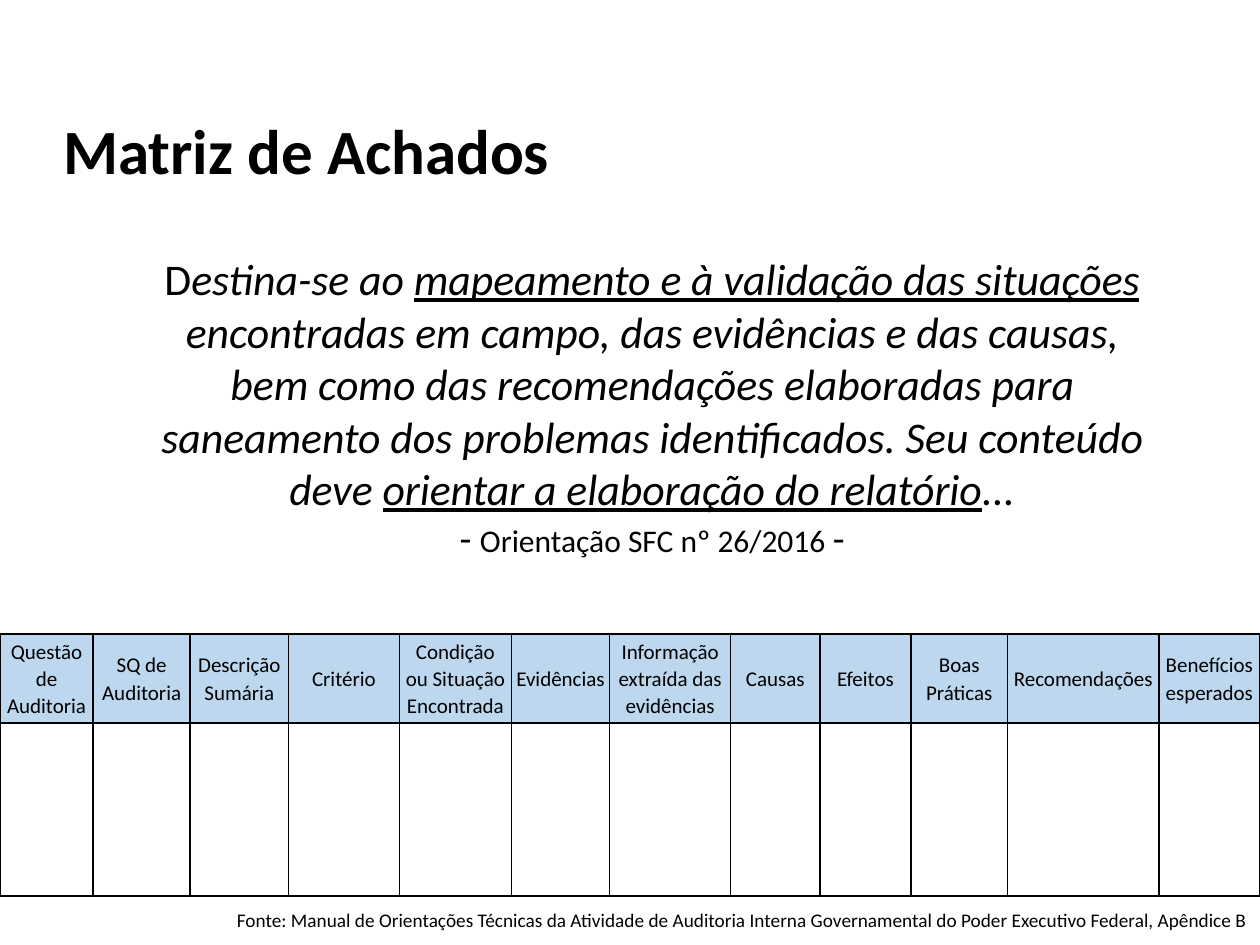
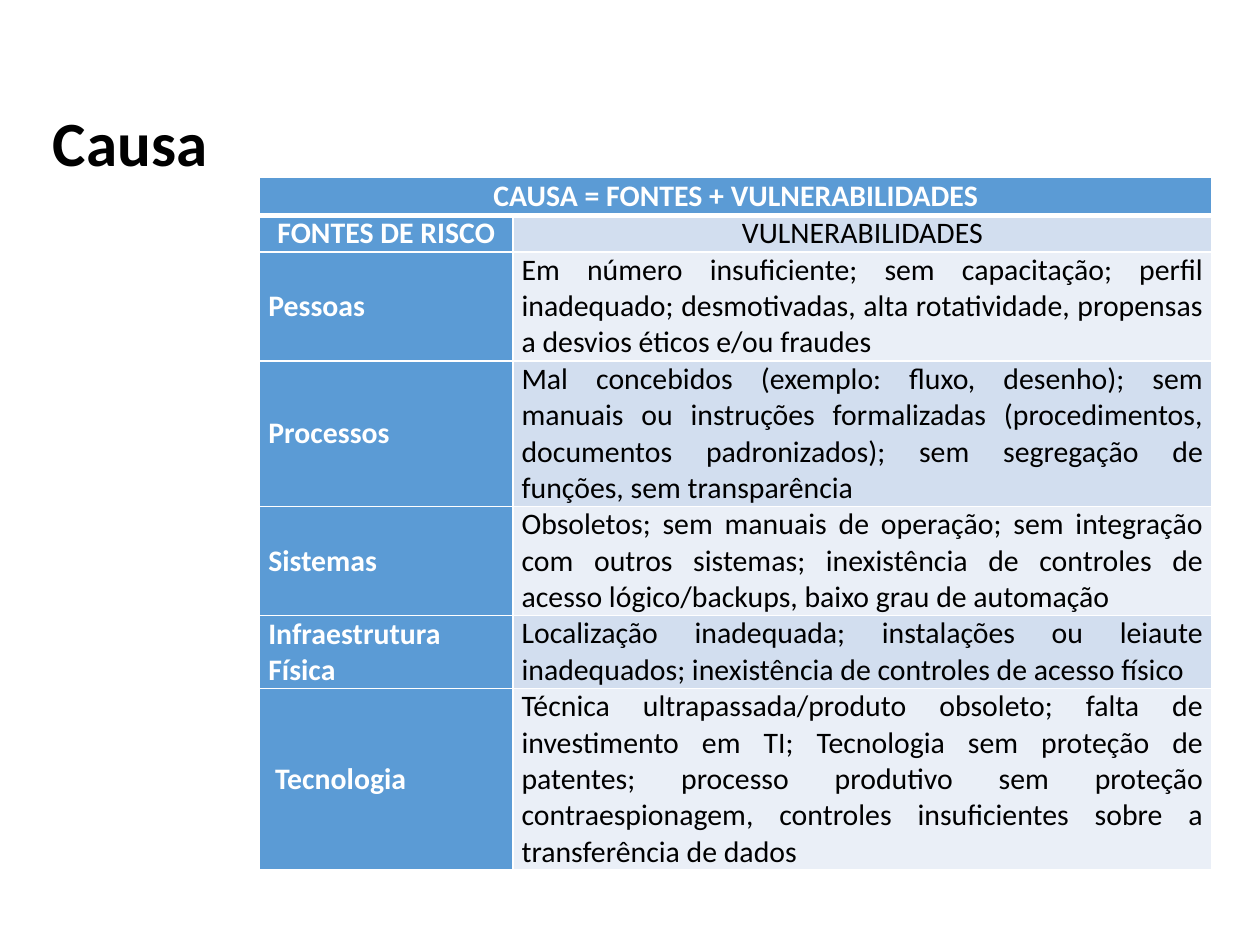
from dataclasses import dataclass
from typing import NamedTuple

from lxml.etree import SubElement
from pptx import Presentation
from pptx.dml.color import RGBColor
from pptx.enum.text import MSO_ANCHOR as Anchor, MSO_AUTO_SIZE as Fit, PP_ALIGN as Align
from pptx.oxml.ns import qn
from pptx.util import Inches, Pt

FONT = "Calibri"
BLACK, WHITE = "000000", "FFFFFF"
SKY, BLUE = "BDD7EE", "5B9BD5"
BANDS = ("EAEFF7", "D2DEEF")


class Span(NamedTuple):
    text: str
    size: int
    slant: bool = False
    line: bool = False


@dataclass
class Look:
    """How the text and ground of a table cell are drawn."""
    fill: str
    size: int
    ink: str = BLACK
    bold: bool = False
    align: Align = Align.CENTER
    anchor: Anchor = Anchor.TOP
    pad: float = 0.07
    space: float = 1.0


QUOTE = (
    (
        Span("D", 25),
        Span("estina-se ao ", 25, True),
        Span("mapeamento e à validação das situações", 25, True, True),
        Span(" encontradas em campo, das evidências e das causas, bem como das "
             "recomendações elaboradas para saneamento dos problemas identificados. "
             "Seu conteúdo deve ", 25, True),
        Span("orientar a elaboração do relatório", 25, True, True),
        Span("...", 25, True),
    ),
    (Span("- ", 22), Span("Orientação SFC nº 26/2016 ", 18), Span("-", 22)),
)
SOURCE = ("Fonte: Manual de Orientações Técnicas da Atividade de Auditoria Interna "
          "Governamental do Poder Executivo Federal, Apêndice B")

# Heading and column width
MATRIX = (
    ("Questão de Auditoria", 0.74),
    ("SQ de Auditoria", 0.77),
    ("Descrição Sumária", 0.78),
    ("Critério", 0.88),
    ("Condição ou Situação Encontrada", 0.89),
    ("Evidências", 0.78),
    ("Informação extraída das evidências", 0.96),
    ("Causas", 0.71),
    ("Efeitos", 0.72),
    ("Boas Práticas", 0.77),
    ("Recomendações", 1.2),
    ("Benefícios esperados", 0.8),
)

# Risk source, its weaknesses and the lines of text they take
RISKS = (
    ("Pessoas", "Em número insuficiente; sem capacitação; perfil inadequado; "
     "desmotivadas, alta rotatividade, propensas a desvios éticos e/ou fraudes", 3),
    ("Processos", "Mal concebidos (exemplo: fluxo, desenho); sem manuais ou instruções "
     "formalizadas (procedimentos, documentos padronizados); sem segregação de funções, "
     "sem transparência", 4),
    ("Sistemas", "Obsoletos; sem manuais de operação; sem integração com outros sistemas; "
     "inexistência de controles de acesso lógico/backups, baixo grau de automação", 3),
    ("Infraestrutura Física", "Localização inadequada; instalações ou leiaute inadequados; "
     "inexistência de controles de acesso físico", 2),
    (" Tecnologia", "Técnica ultrapassada/produto obsoleto; falta de investimento em TI; "
     "Tecnologia sem proteção de patentes; processo produtivo sem proteção "
     "contraespionagem, controles insuficientes sobre a transferência de dados", 5),
)
LINE = 0.28


def tint(code: str) -> RGBColor:
    return RGBColor.from_string(code)


def style(para, size: int | None = None, ink: str = BLACK, bold: bool = False) -> None:
    font = para.font
    font.name = FONT
    font.bold = bold
    font.color.rgb = tint(ink)
    if size:
        font.size = Pt(size)


def add_page(deck, title: str, left: float, top: float):
    page = deck.slides.add_slide(deck.slide_layouts[5])
    head = page.shapes.title
    head.left, head.top = Inches(left), Inches(top)
    head.width, head.height = Inches(9.16), Inches(1.05)
    frame = head.text_frame
    frame.text = title
    frame.auto_size = Fit.NONE
    frame.vertical_anchor = Anchor.TOP
    para = frame.paragraphs[0]
    para.alignment = Align.LEFT
    para.line_spacing = 0.9
    style(para, 36, bold=True)
    return page


def add_text(page, box: tuple[float, ...], paras, align: Align) -> None:
    frame = page.shapes.add_textbox(*map(Inches, box)).text_frame
    frame.word_wrap = True
    frame.auto_size = Fit.SHAPE_TO_FIT_TEXT
    for i, spans in enumerate(paras):
        para = frame.add_paragraph() if i else frame.paragraphs[0]
        para.alignment = align
        style(para)
        for span in spans:
            run = para.add_run()
            run.text = span.text
            run.font.size = Pt(span.size)
            run.font.italic = span.slant
            run.font.underline = span.line


def add_grid(page, left: float, top: float, cols, rows):
    """Add a plain table with the given column widths and row heights."""
    grid = page.shapes.add_table(len(rows), len(cols), Inches(left), Inches(top),
                                 Inches(sum(cols)), Inches(sum(rows))).table
    grid.first_row = grid.horz_banding = False
    for col, width in zip(grid.columns, cols):
        col.width = Inches(width)
    for row, height in zip(grid.rows, rows):
        row.height = Inches(height)
    return grid


def edge(cell, ink: str, top: int = 1, base: int = 1) -> None:
    """Draw the four borders; call before the fill is set."""
    props = cell._tc.get_or_add_tcPr()
    for side, width in (("L", 1), ("R", 1), ("T", top), ("B", base)):
        line = SubElement(props, qn(f"a:ln{side}"), w=str(Pt(width)))
        SubElement(SubElement(line, qn("a:solidFill")), qn("a:srgbClr"), val=ink)


def put(cell, text: str, look: Look) -> None:
    cell.fill.solid()
    cell.fill.fore_color.rgb = tint(look.fill)
    cell.margin_left = cell.margin_right = Inches(look.pad)
    cell.margin_top = cell.margin_bottom = 0
    cell.vertical_anchor = look.anchor
    cell.text = text
    para = cell.text_frame.paragraphs[0]
    para.alignment = look.align
    para.line_spacing = look.space
    style(para, look.size, look.ink, look.bold)


def add_matrix(deck) -> None:
    page = add_page(deck, "Matriz de Achados", 0.4, 0.9)
    add_text(page, (1.04, 1.95, 8.27, 2.57), QUOTE, Align.CENTER)
    grid = add_grid(page, 0, 5.03, [width for _, width in MATRIX], (0.71, 1.37))
    look = Look(SKY, 12, anchor=Anchor.MIDDLE, pad=0.03, space=1.07)
    for i, (name, _) in enumerate(MATRIX):
        head, blank = grid.cell(0, i), grid.cell(1, i)
        edge(head, BLACK)
        edge(blank, BLACK)
        put(head, name, look)
        blank.fill.background()
    add_text(page, (1.62, 7.16, 8.38, 0.29), [[Span(SOURCE, 11)]], Align.RIGHT)


def add_causes(deck) -> None:
    page = add_page(deck, "Causa", 0.32, 0.84)
    rows = [0.3, LINE] + [LINE * lines for *_, lines in RISKS]
    grid = add_grid(page, 2.06, 1.41, (2.01, 5.55), rows)
    for r in range(len(rows)):
        for c in range(2):
            edge(grid.cell(r, c), WHITE, 3 if r == 1 else 1, 3 if r == 0 else 1)
    head = Look(BLUE, 17, WHITE, True)
    grid.cell(0, 0).merge(grid.cell(0, 1))
    put(grid.cell(0, 0), "CAUSA = FONTES + VULNERABILIDADES", head)
    put(grid.cell(1, 0), "FONTES DE RISCO", head)
    put(grid.cell(1, 1), "VULNERABILIDADES", Look(BANDS[1], 17))
    side = Look(BLUE, 17, WHITE, True, Align.JUSTIFY, Anchor.MIDDLE)
    for i, (name, flaws, _) in enumerate(RISKS):
        put(grid.cell(i + 2, 0), name, side)
        put(grid.cell(i + 2, 1), flaws, Look(BANDS[i % 2], 17, align=Align.JUSTIFY))


def main() -> None:
    deck = Presentation()
    deck.slide_width, deck.slide_height = Inches(10), Inches(7.5)
    add_matrix(deck)
    add_causes(deck)
    deck.save("out.pptx")


if __name__ == "__main__":
    main()
